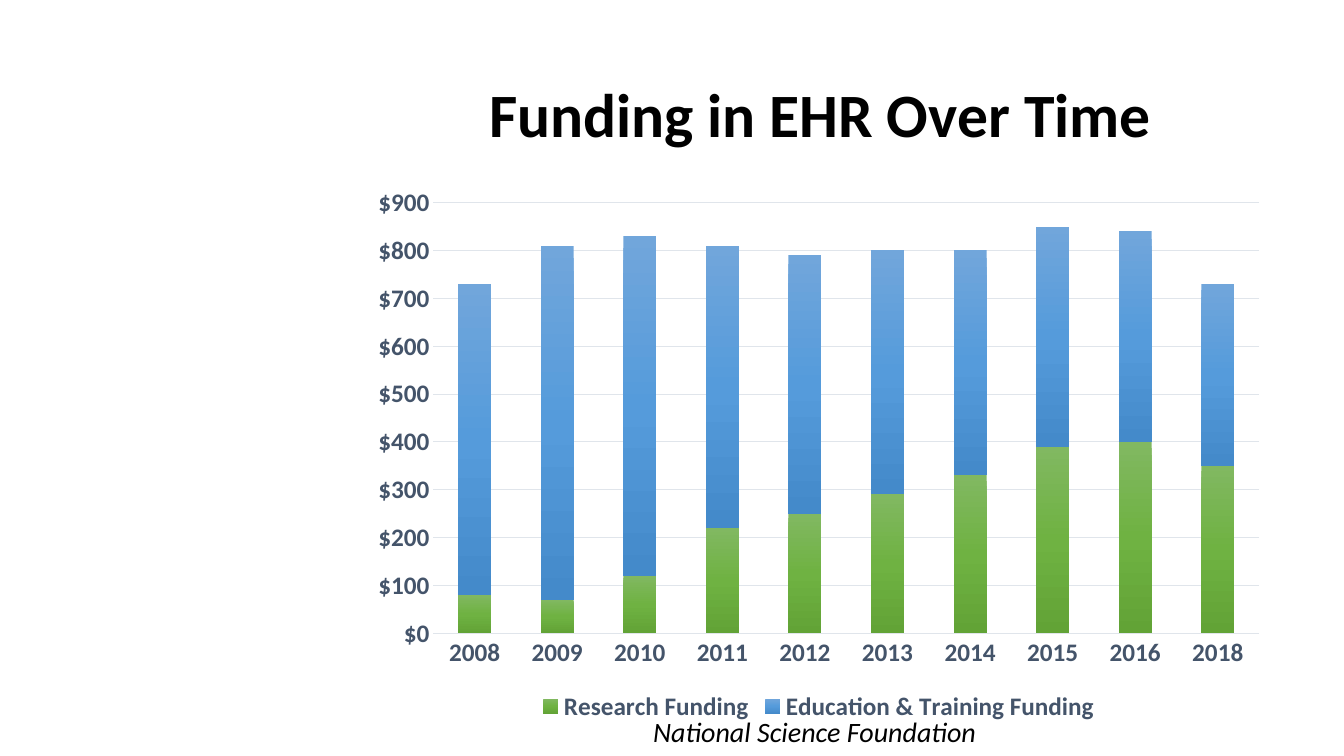
from lxml import etree
from pptx import Presentation
from pptx import util as u
from pptx.chart.data import CategoryChartData
from pptx.dml.color import RGBColor
from pptx.enum import chart as ch
from pptx.enum import text
from pptx.oxml import parse_xml
from pptx.oxml.ns import nsdecls, qn

FONT = "Calibri"
SLATE, GRID, BLACK = "44546A", "E0E5EB", "000000"

YEARS = ["2008", "2009", "2010", "2011", "2012", "2013", "2014", "2015", "2016", "2018"]
# Name, values in millions, gradient from top to bottom
FUNDING = [
    ("Research Funding",
     [80, 70, 120, 220, 250, 290, 330, 390, 400, 350],
     ["81B861", "6FB242", "62A336"]),
    ("Education & Training Funding",
     [650, 740, 710, 590, 540, 510, 470, 460, 440, 380],
     ["71A6DB", "559BDB", "448ACA"]),
]


def colour(hex_code):
    return RGBColor.from_string(hex_code)


def style_font(font, size, hex_code, bold=False, italic=False):
    font.name = FONT
    font.size = u.Pt(size)
    font.bold = bold
    font.italic = italic
    font.color.rgb = colour(hex_code)


def style_line(line, hex_code):
    line.color.rgb = colour(hex_code)
    line.width = u.Pt(0.75)


def place(shape, box):
    shape.left, shape.top, shape.width, shape.height = [u.Inches(side) for side in box]


def fill_gradient(series, stops):
    """Fill the bars with evenly spaced stops running downwards."""
    series.format.fill.gradient()
    gradient = series.format.fill._xPr.find(qn("a:gradFill"))
    for child in list(gradient):
        gradient.remove(child)
    stop_list = etree.SubElement(gradient, qn("a:gsLst"))
    for index, hex_code in enumerate(stops):
        position = index * 100000 // (len(stops) - 1)
        stop_list.append(parse_xml(
            f'<a:gs {nsdecls("a")} pos="{position}"><a:srgbClr val="{hex_code}"/></a:gs>'))
    etree.SubElement(gradient, qn("a:lin"), ang="5400000", scaled="0")


def add_title(page, box):
    title = page.shapes.title
    place(title, box)
    frame = title.text_frame
    frame.word_wrap = True
    frame.auto_size = text.MSO_AUTO_SIZE.NONE
    frame.vertical_anchor = text.MSO_ANCHOR.TOP
    para = frame.paragraphs[0]
    para.alignment = text.PP_ALIGN.LEFT
    para.line_spacing = 0.9
    span = para.add_run()
    span.text = "Funding in EHR Over Time"
    style_font(span.font, 44, BLACK, bold=True)


def add_funding_chart(page, box):
    data = CategoryChartData()
    data.categories = YEARS
    for name, values, _ in FUNDING:
        data.add_series(name, values)
    frame = page.shapes.add_chart(
        ch.XL_CHART_TYPE.COLUMN_STACKED, *[u.Inches(side) for side in box], data)
    chart = frame.chart
    chart.has_title = False
    style_font(chart.font, 18, SLATE, bold=True)

    # Bars
    plot = chart.plots[0]
    plot.gap_width = 150
    plot.overlap = 100
    plot.vary_by_categories = False
    for series, (_, _, stops) in zip(plot.series, FUNDING):
        fill_gradient(series, stops)

    # Axes
    years, dollars = chart.category_axis, chart.value_axis
    for axis in (years, dollars):
        axis.major_tick_mark = ch.XL_TICK_MARK.NONE
        axis.minor_tick_mark = ch.XL_TICK_MARK.NONE
        style_font(axis.tick_labels.font, 18, SLATE, bold=True)
    style_line(years.format.line, GRID)
    dollars.minimum_scale, dollars.maximum_scale, dollars.major_unit = 0, 900, 100
    dollars.format.line.fill.background()
    dollars.tick_labels.number_format = '"$"#,##0'
    dollars.tick_labels.number_format_is_linked = False
    dollars.has_major_gridlines = True
    style_line(dollars.major_gridlines.format.line, GRID)

    # Legend
    chart.has_legend = True
    chart.legend.position = ch.XL_LEGEND_POSITION.BOTTOM
    chart.legend.include_in_layout = False
    style_font(chart.legend.font, 18, SLATE, bold=True)


def add_agency_name(page, box):
    label = page.shapes.add_textbox(*[u.Inches(side) for side in box])
    label.text_frame.word_wrap = True
    para = label.text_frame.paragraphs[0]
    para.alignment = text.PP_ALIGN.CENTER
    span = para.add_run()
    span.text = "National Science Foundation"
    style_font(span.font, 20, BLACK, italic=True)


def main():
    deck = Presentation()
    deck.slide_width, deck.slide_height = u.Inches(13.33), u.Inches(7.5)
    page = deck.slides.add_slide(deck.slide_layouts[5])
    add_funding_chart(page, (3.57, 1.75, 9.1, 5.46))
    add_title(page, (4.75, 0.79, 6.94, 1.45))
    add_agency_name(page, (3.25, 7.04, 9.66, 0.44))
    deck.save("out.pptx")


if __name__ == "__main__":
    main()
